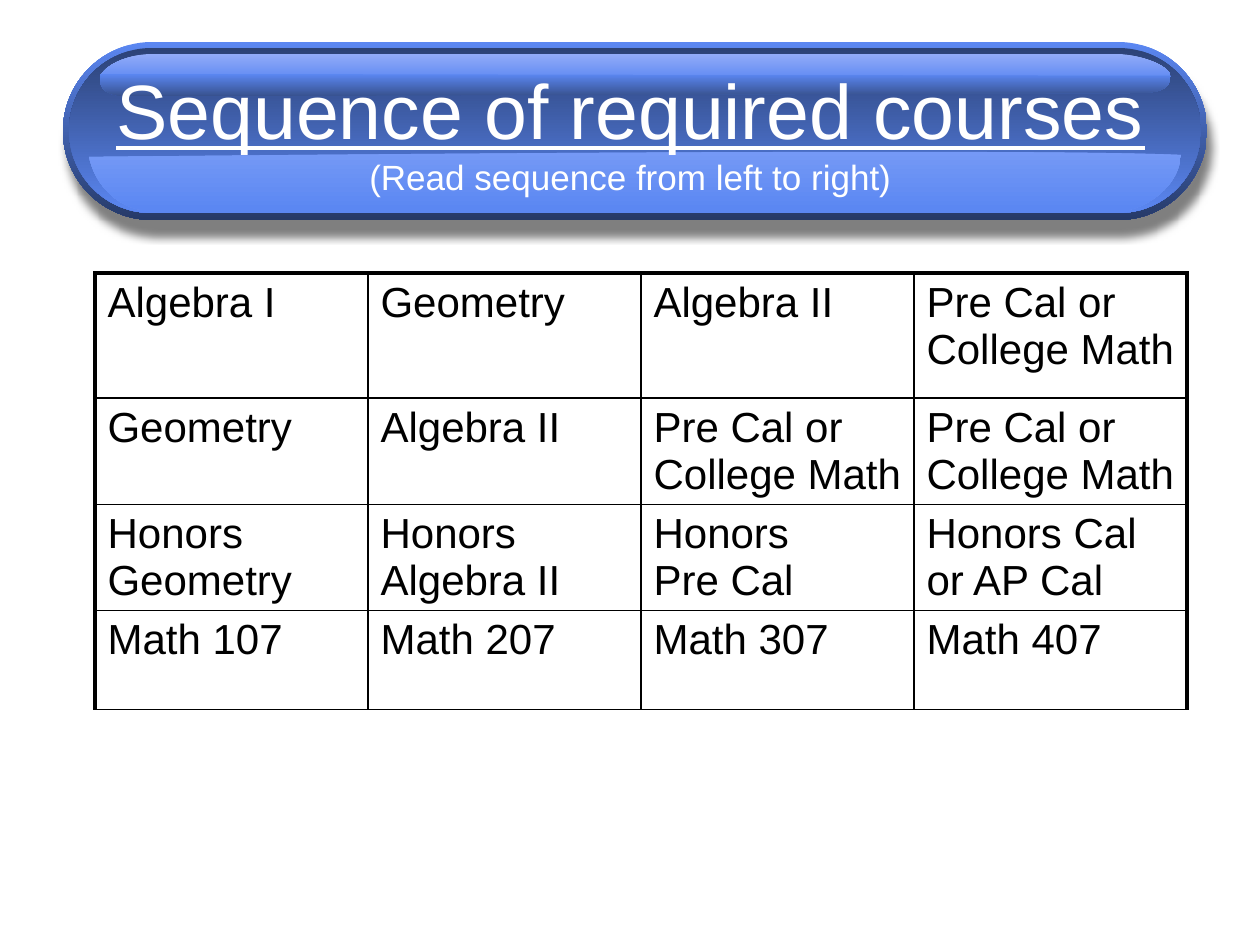
from lxml import etree
from pptx import Presentation
from pptx import util as u
from pptx.dml.color import RGBColor
from pptx.enum import shapes, text
from pptx.oxml import parse_xml
from pptx.oxml.ns import nsdecls, qn

PX = u.Inches(1) / 126
FONT = "Arial"
COLORS = {
    "blue": "5B87F2", "navy": "263A68", "deep": "2C4276", "shade": "38528F",
    "gloss": "92ABF8", "glow": "779BF6", "black": "000000", "white": "FFFFFF",
}
COURSES = [
    ["Algebra I", "Geometry", "Algebra II", "Pre Cal or College Math"],
    ["Geometry", "Algebra II", "Pre Cal or College Math", "Pre Cal or College Math"],
    ["Honors Geometry", "Honors Algebra II", "Honors\nPre Cal", "Honors Cal or AP Cal"],
    ["Math 107", "Math 207", "Math 307", "Math 407"],
]
ROW_HEIGHTS = [125, 106, 106, 99]


def px(length):
    return u.Emu(round(length * PX))


def rgb(name):
    return RGBColor.from_string(COLORS[name])


def paint(shape, top, bottom):
    """Fill with a vertical gradient, without outline or shadow."""
    shape.shadow.inherit = False
    shape.line.fill.background()
    shape.fill.gradient()
    shape.fill.gradient_angle = 270
    for stop, name in zip(shape.fill.gradient_stops, (top, bottom)):
        stop.color.rgb = rgb(name)


def add_pill(slide, left, top, width, height, colors):
    pill = slide.shapes.add_shape(
        shapes.MSO_SHAPE.ROUNDED_RECTANGLE, px(left), px(top), px(width), px(height))
    pill.adjustments[0] = 0.5
    paint(pill, *colors)
    return pill


def drop_shadow(shape):
    effects = shape._element.spPr.find(qn("a:effectLst"))
    effects.append(parse_xml(
        f'<a:outerShdw {nsdecls("a")} blurRad="{u.Pt(5)}" dist="{u.Pt(9.2)}" '
        f'dir="{77 * 60000}" algn="ctr" rotWithShape="0">'
        f'<a:srgbClr val="{COLORS["black"]}"><a:alpha val="50000"/></a:srgbClr>'
        '</a:outerShdw>'))


def add_reflection(slide, left, top, outline, colors):
    """Draw an outline whose segments are one line point or three curve points."""
    start, *points = [(px(left + x), px(top + y)) for segment in outline for x, y in segment]
    builder = slide.shapes.build_freeform(*start)
    builder.add_line_segments(points, close=True)
    shape = builder.convert_to_shape()
    paint(shape, *colors)
    lines = iter(list(shape._element.iter(qn("a:lnTo"))))
    for segment in outline[1:]:
        parts = [next(lines) for _ in segment]
        if len(parts) == 3:
            curve = etree.Element(qn("a:cubicBezTo"))
            parts[0].addprevious(curve)
            for part in parts:
                curve.append(part[0])
                part.getparent().remove(part)


def add_banner(slide, left, top, width, height):
    drop_shadow(add_pill(slide, left, top, width, height, ("blue", "navy")))
    add_pill(slide, left + 6, top + 6, width - 12, height - 13, ("deep", "blue"))
    add_reflection(slide, left, top, [
        [(37, 35)], [(43, 21), (69, 12), (89, 12)], [(1056, 12)],
        [(1075, 13), (1106, 22), (1108, 35)], [(937, 39), (37, 35), (37, 35)],
    ], ("gloss", "blue"))
    add_reflection(slide, left, top, [
        [(37, 32)], [(35, 49), (45, 54), (66, 54)], [(1079, 51)],
        [(1097, 50), (1106, 48), (1108, 34)],
    ], ("blue", "shade"))
    add_reflection(slide, left, top, [
        [(26, 115)], [(33, 147), (59, 167), (81, 168)], [(1065, 168)],
        [(1084, 165), (1116, 145), (1118, 113)], [(945, 105), (26, 115), (26, 115)],
    ], ("glow", "blue"))


def fill_title(slide, left, top, width, height):
    title = slide.shapes.title
    slide.shapes._spTree.append(title._element)  # in front of the banner
    title.left, title.top, title.width, title.height = map(px, (left, top, width, height))
    frame = title.text_frame
    frame.auto_size = text.MSO_AUTO_SIZE.NONE
    frame.word_wrap = True
    frame.vertical_anchor = text.MSO_ANCHOR.MIDDLE
    paragraph = frame.paragraphs[0]
    paragraph.alignment = text.PP_ALIGN.CENTER
    paragraph.font.name = FONT
    paragraph.font.color.rgb = rgb("white")
    heading = paragraph.add_run()
    heading.text = "Sequence of required courses"
    heading.font.size = u.Pt(44)
    heading.font.underline = True
    paragraph.add_line_break()
    hint = paragraph.add_run()
    hint.text = "(Read sequence from left to right)"
    hint.font.size = u.Pt(20)


def set_borders(cell, widths):
    """Give the left, right, top and bottom borders their widths in points."""
    properties = cell._tc.get_or_add_tcPr()
    for index, (side, width) in enumerate(zip("LRTB", widths)):
        line = etree.Element(qn(f"a:ln{side}"), w=str(u.Pt(width)))
        fill = etree.SubElement(line, qn("a:solidFill"))
        etree.SubElement(fill, qn("a:srgbClr"), val=COLORS["black"])
        properties.insert(index, line)


def add_course_table(slide, left, top, width):
    rows, columns = len(COURSES), len(COURSES[0])
    table = slide.shapes.add_table(
        rows, columns, px(left), px(top), px(width), px(sum(ROW_HEIGHTS))).table
    table.first_row = table.horz_banding = False
    for column in table.columns:
        column.width = px(width / columns)
    for r, (names, height) in enumerate(zip(COURSES, ROW_HEIGHTS)):
        table.rows[r].height = px(height)
        for c, name in enumerate(names):
            cell = table.cell(r, c)
            cell.text = name
            cell.fill.background()
            for paragraph in cell.text_frame.paragraphs:
                paragraph.font.name = FONT
                paragraph.font.size = u.Pt(24)
                paragraph.font.color.rgb = rgb("black")
            outer = (c == 0, c == columns - 1, r == 0, False)
            set_borders(cell, [2.25 if edge else 1 for edge in outer])


def main():
    presentation = Presentation()
    presentation.slide_width, presentation.slide_height = px(1260), px(945)
    slide = presentation.slides.add_slide(presentation.slide_layouts[5])
    add_banner(slide, 63, 42, 1144, 178)
    fill_title(slide, 95, 51, 1071, 158)
    add_course_table(slide, 95, 273, 1092)
    presentation.save("out.pptx")


if __name__ == "__main__":
    main()
